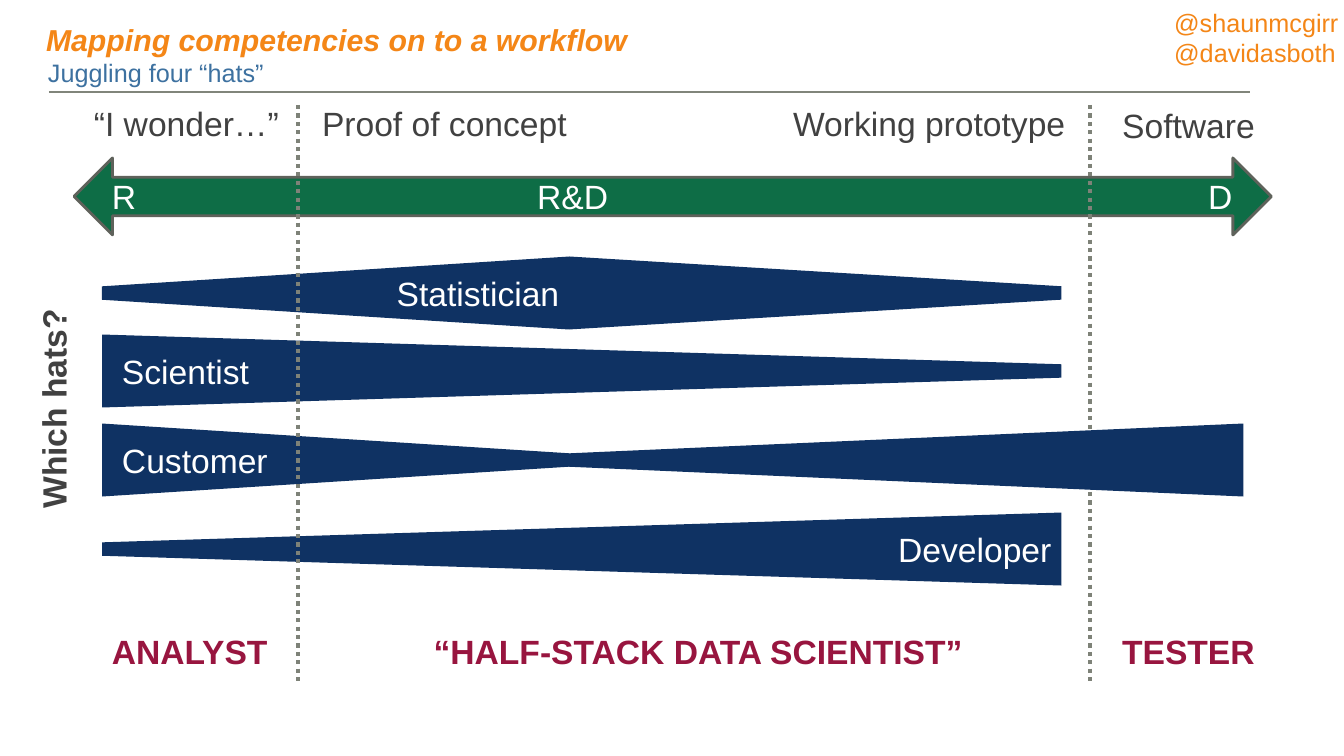
from lxml import etree
from pptx import Presentation, util as u
from pptx.dml.color import RGBColor
from pptx.enum import dml, shapes, text
from pptx.oxml.ns import qn

EMU_PER_PX = 914400 / 100.8
FONT = "Arial"
ORANGE, BLUE, GREY, WHITE = "F48617", "3D71A0", "414141", "FFFFFF"
NAVY, GREEN, CRIMSON = "0F3263", "0E6D46", "98153F"
WEDGE_WIDTH = 73
HATS_LEFT, HATS_PEAK, PROTOTYPE_END, SOFTWARE_END = 102, 569, 1061, 1243


def px(length):
    return u.Emu(round(length * EMU_PER_PX))


def colour(hex_value):
    return RGBColor.from_string(hex_value)


def write(shape, words, size=24, color=GREY, bold=False, italic=False,
          align="LEFT", anchor="TOP", spacing=None, indent=0, wrap=True):
    frame = shape.text_frame
    frame.word_wrap = wrap
    frame.vertical_anchor = getattr(text.MSO_ANCHOR, anchor)
    frame.text = words
    for paragraph in frame.paragraphs:
        paragraph.alignment = getattr(text.PP_ALIGN, align)
        if spacing:
            paragraph.line_spacing = spacing
        if indent:
            paragraph._p.get_or_add_pPr().set("marL", str(px(indent)))
        for run in paragraph.runs:
            font = run.font
            font.name, font.size = FONT, u.Pt(size)
            font.bold, font.italic = bold, italic
            font.color.rgb = colour(color)


def label(slide, words, left, top, width, height, rotation=0, **style):
    box = slide.shapes.add_textbox(px(left), px(top), px(width), px(height))
    box.rotation = rotation
    write(box, words, **style)
    return box


def rule(slide, x1, y1, x2, y2, color, weight, dash=None):
    line = slide.shapes.add_connector(
        shapes.MSO_CONNECTOR.STRAIGHT, px(x1), px(y1), px(x2), px(y2))
    line.line.color.rgb = colour(color)
    line.line.width = u.Pt(weight)
    if dash:
        line.line.dash_style = dash
    etree.SubElement(line._element.spPr, qn("a:effectLst"))


def stage_divider(slide, x):
    rule(slide, x, 105, x, 683, "7E8278", 3, dml.MSO_LINE.ROUND_DOT)


def solid(slide, preset, left, top, width, height, fill):
    shape = slide.shapes.add_shape(
        preset, px(left), px(top), px(width), px(height))
    shape.shadow.inherit = False
    shape.fill.solid()
    shape.fill.fore_color.rgb = colour(fill)
    shape.line.fill.background()
    return shape


def wedge(slide, left, right, middle, wide_end, hat="", indent=0):
    """Lay a trapezoid on its side, its label reading from the wide end."""
    length = right - left
    shape = solid(slide, shapes.MSO_SHAPE.TRAPEZOID,
                  (left + right - WEDGE_WIDTH) / 2, middle - length / 2,
                  WEDGE_WIDTH, length, NAVY)
    shape.adjustments[0] = 0.408
    on_left = wide_end == "LEFT"
    shape.rotation = 90 if on_left else 270
    if hat:
        write(shape, hat, color=WHITE, align=wide_end, anchor="MIDDLE",
              indent=indent)
        shape.text_frame._txBody.bodyPr.set(
            "vert", "vert270" if on_left else "vert")


def add_header(slide):
    rule(slide, 49, 92, 1250, 92, "81857B", 1)
    handles = label(slide, "@shaunmcgirr\n@davidasboth", 1164, 2, 180, 72,
                    size=18, color=ORANGE)
    handles.text_frame.margin_right = 0
    title = label(slide, "Mapping competencies on to a workflow",
                  33, 22, 1288, 35, size=21.6, color=ORANGE,
                  bold=True, italic=True, anchor="MIDDLE")
    frame = title.text_frame
    frame.margin_left = frame.margin_right = px(13)
    frame.margin_top = frame.margin_bottom = px(7)
    label(slide, "Juggling four “hats”", 38, 52, 1289, 35,
          size=18, color=BLUE)


def add_research_axis(slide):
    axis = solid(slide, shapes.MSO_SHAPE.LEFT_RIGHT_ARROW,
                 74, 158, 1197, 77, GREEN)
    axis.line.color.rgb = colour("5F625B")
    axis.line.width = u.Pt(2)
    for words, left, width, align in (("R", 102, 44, "LEFT"),
                                      ("R&D", 526, 93, "CENTER"),
                                      ("D", 1198, 45, "LEFT")):
        label(slide, words, left, 171, width, 50, color=WHITE,
              align=align, wrap=False)


def add_hats(slide):
    label(slide, "Which hats?", -53, 383, 221, 50, rotation=270,
          bold=True, spacing=0.9)
    for left, right, middle, wide_end, hat, indent in (
            (HATS_PEAK, PROTOTYPE_END, 293, "LEFT", "", 0),
            (HATS_LEFT, HATS_PEAK, 293, "RIGHT", "Statistician", 0),
            (HATS_LEFT, PROTOTYPE_END, 371, "LEFT", "Scientist", 10),
            (HATS_LEFT, HATS_PEAK, 460, "LEFT", "Customer", 10),
            (HATS_PEAK, SOFTWARE_END, 460, "RIGHT", "", 0),
            (HATS_LEFT, PROTOTYPE_END, 549, "RIGHT", "Developer", 0)):
        wedge(slide, left, right, middle, wide_end, hat, indent)


def add_stages_and_roles(slide):
    for words, left, top, width in (("“I wonder…”", 84, 103, 215),
                                    ("Proof of concept", 312, 103, 306),
                                    ("Working prototype", 783, 103, 306),
                                    ("Software", 1112, 104, 155)):
        label(slide, words, left, top, width, 51, spacing=0.9)
    for words, left, width, align in (
            ("ANALYST", 102, 182, "LEFT"),
            ("“HALF-STACK DATA SCIENTIST”", 335, 726, "CENTER"),
            ("TESTER", 1112, 155, "LEFT")):
        label(slide, words, left, 630, width, 51, color=CRIMSON,
              bold=True, align=align, spacing=0.9)


def main():
    deck = Presentation()
    deck.slide_width, deck.slide_height = u.Inches(13.33), u.Inches(7.5)
    slide = deck.slides.add_slide(deck.slide_layouts[6])
    add_header(slide)
    add_research_axis(slide)
    stage_divider(slide, 1090)
    add_hats(slide)
    stage_divider(slide, 298)
    add_stages_and_roles(slide)
    deck.save("out.pptx")


if __name__ == "__main__":
    main()
